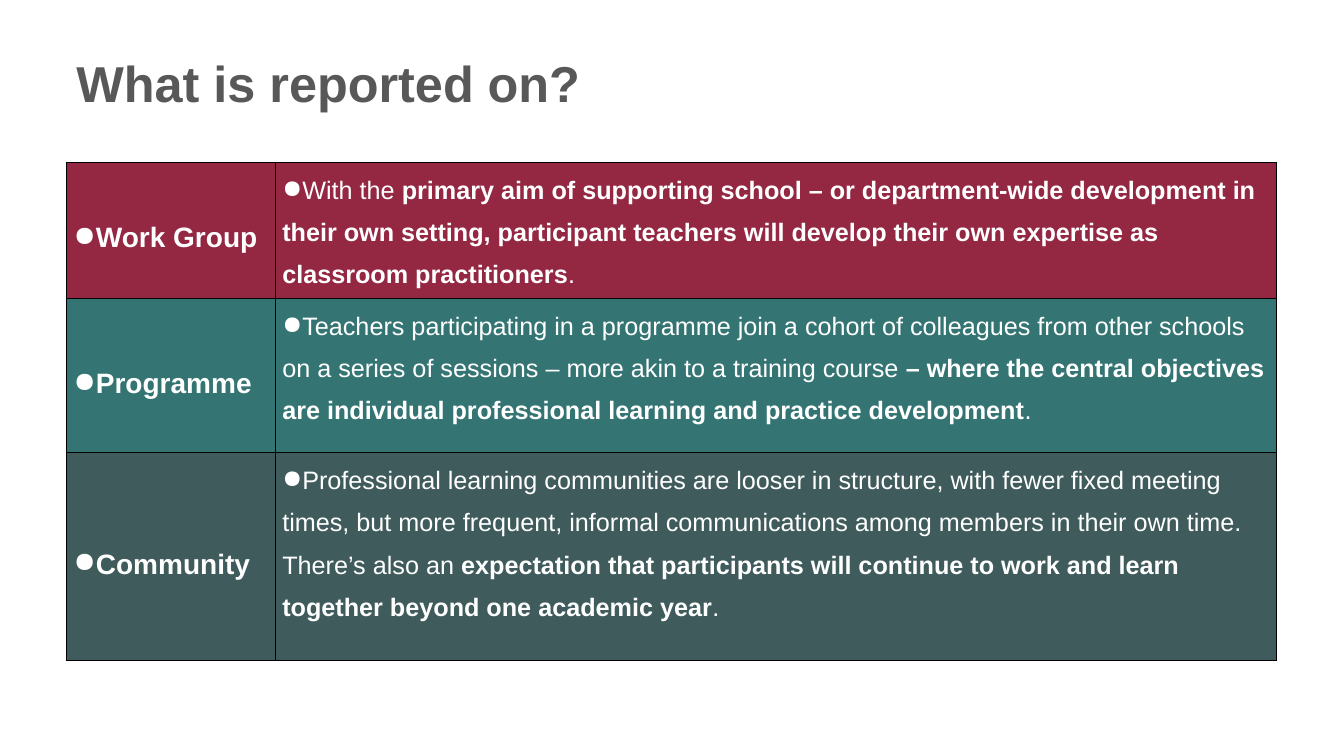
from dataclasses import dataclass

from lxml import etree
from pptx import Presentation
from pptx import util as u
from pptx.dml.color import RGBColor
from pptx.enum import text
from pptx.oxml import ns

# Colours and font
WHITE = RGBColor(0xFF, 0xFF, 0xFF)
GREY = RGBColor(0x58, 0x58, 0x58)
RED = RGBColor(0x94, 0x27, 0x42)
TEAL = RGBColor(0x34, 0x75, 0x74)
SLATE = RGBColor(0x3F, 0x5B, 0x5C)
FACE = "Arial"

# Slide size, and places as percentages of it
WIDTH, HEIGHT = u.Inches(13.33), u.Inches(7.5)
LEFT, SPAN = 4.95, 90
TITLE_TOP, TITLE_HIGH = 6.27, 14.27
TABLE_TOP = 21.47
COLS = (15.53, 74.47)


@dataclass(frozen=True)
class Mode:
    name: str
    plain: str
    strong: str
    fill: RGBColor
    high: float
    after: int = 3


MODES = (
    Mode("Work Group", "With the ",
         "primary aim of supporting school – or department-wide development in "
         "their own setting, participant teachers will develop their own "
         "expertise as classroom practitioners", RED, 13.33, 6),
    Mode("Programme",
         "Teachers participating in a programme join a cohort of colleagues from "
         "other schools on a series of sessions – more akin to a training course ",
         "– where the central objectives are individual professional learning "
         "and practice development", TEAL, 20.4),
    Mode("Community",
         "Professional learning communities are looser in structure, with fewer "
         "fixed meeting times, but more frequent, informal communications among "
         "members in their own time. There’s also an ",
         "expectation that participants will continue to work and learn together "
         "beyond one academic year", SLATE, 27.47),
)


def across(share: float) -> int:
    return round(WIDTH * share / 100)


def down(share: float) -> int:
    return round(HEIGHT * share / 100)


def style(para, size: int, color: RGBColor) -> None:
    para.font.name = FACE
    para.font.size = u.Pt(size)
    para.font.color.rgb = color


def border(cell) -> None:
    props = cell._tc.get_or_add_tcPr()
    for side in ("lnL", "lnR", "lnT", "lnB"):
        line = etree.SubElement(props, ns.qn(f"a:{side}"), w=str(u.Pt(1)))
        paint = etree.SubElement(line, ns.qn("a:solidFill"))
        etree.SubElement(paint, ns.qn("a:srgbClr"), val="000000")


def write(cell, runs: tuple[tuple[str, bool], ...], size: int,
          fill: RGBColor, after: int) -> None:
    border(cell)
    cell.fill.solid()
    cell.fill.fore_color.rgb = fill
    cell.margin_left = cell.margin_right = u.Inches(0.07)
    cell.margin_top = cell.margin_bottom = 0
    para = cell.text_frame.paragraphs[0]
    para.line_spacing = 1.5
    para.space_after = u.Pt(after)
    props = para._p.get_or_add_pPr()
    props.set("marL", "0")
    props.set("indent", "0")
    etree.SubElement(props, ns.qn("a:buChar"), char="●")
    style(para, size, WHITE)
    for words, bold in runs:
        run = para.add_run()
        run.text = words
        run.font.bold = bold


def add_title(slide) -> None:
    box = slide.shapes.add_textbox(across(LEFT), down(TITLE_TOP),
                                   across(SPAN), down(TITLE_HIGH))
    box.text_frame.word_wrap = True
    para = box.text_frame.paragraphs[0]
    para.text = "What is reported on?"
    style(para, 36, GREY)
    para.font.bold = True


def add_modes(slide) -> None:
    high = sum(mode.high for mode in MODES)
    table = slide.shapes.add_table(len(MODES), len(COLS), across(LEFT),
                                   down(TABLE_TOP), across(SPAN),
                                   down(high)).table
    table.first_row = table.horz_banding = False
    for col, share in zip(table.columns, COLS):
        col.width = across(share)
    for row, mode in zip(table.rows, MODES):
        row.height = down(mode.high)
        name, about = row.cells
        write(name, ((mode.name, True),), 20, mode.fill, 3)
        name.vertical_anchor = text.MSO_ANCHOR.MIDDLE
        write(about, ((mode.plain, False), (mode.strong, True), (".", False)),
              18, mode.fill, mode.after)


def main() -> None:
    deck = Presentation()
    deck.slide_width, deck.slide_height = WIDTH, HEIGHT
    slide = deck.slides.add_slide(deck.slide_layouts[6])
    add_title(slide)
    add_modes(slide)
    deck.save("out.pptx")


if __name__ == "__main__":
    main()
